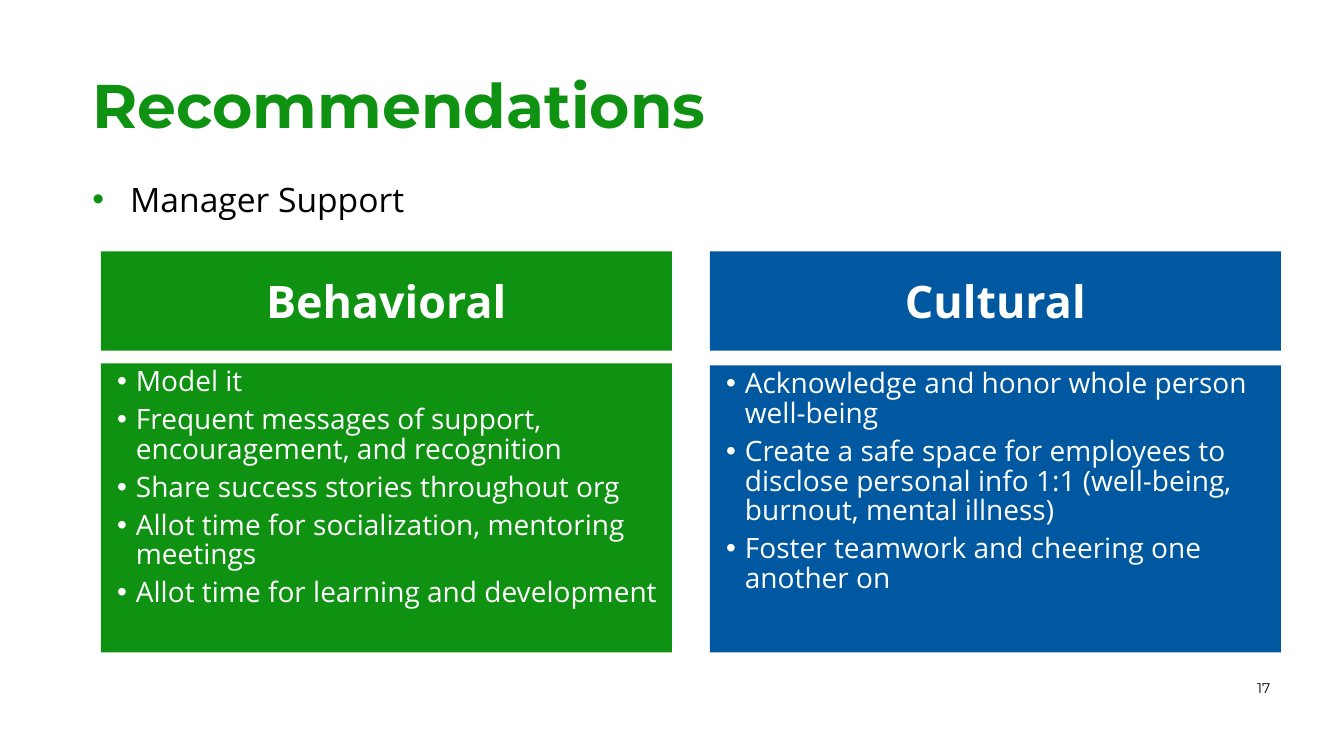
from lxml import etree
from pptx import Presentation
from pptx.dml.color import RGBColor
from pptx.enum import shapes, text
from pptx.oxml import ns
from pptx.util import Pt

GREEN, BLUE, WHITE, BLACK = "0F9112", "0058A0", "FFFFFF", "000000"
COLUMN_W, HEADER_TOP, HEADER_H = 408, 179.5, 71

# heading, colour, left, list top, list height, items
COLUMNS = [
    ("Cultural", BLUE, 507, 261, 205, [
        "Acknowledge and honor whole person well-being",
        "Create a safe space for employees to disclose personal info 1:1 "
        "(well-being, burnout, mental illness)",
        "Foster teamwork and cheering one another on"]),
    ("Behavioral", GREEN, 72, 259.5, 206.5, [
        "Model it",
        "Frequent messages of support, encouragement, and recognition",
        "Share success stories throughout org",
        "Allot time for socialization, mentoring meetings",
        "Allot time for learning and development"]),
]


def rgb(value):
    return RGBColor.from_string(value)


def style(p, size, color, font="Open Sans", bold=False):
    for r in p.runs:
        r.font.name, r.font.size, r.font.bold = font, Pt(size), bold
        r.font.color.rgb = rgb(color)


def add_bullet(p, indent, hanging, color):
    pPr = p._p.get_or_add_pPr()
    pPr.set("marL", str(Pt(indent)))
    pPr.set("indent", str(-Pt(hanging)))
    clr = etree.SubElement(pPr, ns.qn("a:buClr"))
    etree.SubElement(clr, ns.qn("a:srgbClr"), val=color)
    etree.SubElement(pPr, ns.qn("a:buFont"), typeface="Arial")
    etree.SubElement(pPr, ns.qn("a:buChar"), char="•")
    p.space_after = Pt(6)


def set_frame(tf, left=0, top=0, right=0, bottom=0, anchor=text.MSO_ANCHOR.TOP):
    tf.word_wrap = True
    tf.auto_size = text.MSO_AUTO_SIZE.NONE
    tf.margin_left, tf.margin_top = Pt(left), Pt(top)
    tf.margin_right, tf.margin_bottom = Pt(right), Pt(bottom)
    tf.vertical_anchor = anchor


def add_title(slide, title):
    sp = slide.shapes.title
    sp.left, sp.top, sp.width, sp.height = Pt(66), Pt(54), Pt(828), Pt(54)
    set_frame(sp.text_frame)
    sp.text_frame.text = title
    p = sp.text_frame.paragraphs[0]
    p.alignment = text.PP_ALIGN.LEFT
    p.line_spacing = 0.9
    style(p, 44, GREEN, "Montserrat", True)


def add_text(slide, content, left, top, width, height):
    tf = slide.shapes.add_textbox(Pt(left), Pt(top), Pt(width), Pt(height)).text_frame
    set_frame(tf)
    tf.text = content
    return tf


def add_panel(slide, left, top, height, color, anchor):
    sp = slide.shapes.add_shape(shapes.MSO_SHAPE.RECTANGLE, Pt(left), Pt(top),
                                Pt(COLUMN_W), Pt(height))
    sp.shadow.inherit = False
    sp.fill.solid()
    sp.fill.fore_color.rgb = rgb(color)
    sp.line.fill.background()
    set_frame(sp.text_frame, 7.2, 3.6, 7.2, 3.6, anchor)
    return sp.text_frame


def add_column(slide, heading, color, left, top, height, items):
    # List panel
    tf = add_panel(slide, left, top, height, color, text.MSO_ANCHOR.TOP)
    tf.text = "\n".join(items)
    for p in tf.paragraphs:
        add_bullet(p, 18, 13.5, WHITE)
        p.alignment = text.PP_ALIGN.LEFT
        p.line_spacing = 0.88
        style(p, 20, WHITE)

    # Heading panel
    tf = add_panel(slide, left, HEADER_TOP, HEADER_H, color, text.MSO_ANCHOR.MIDDLE)
    tf.text = heading
    tf.paragraphs[0].alignment = text.PP_ALIGN.CENTER
    style(tf.paragraphs[0], 32, WHITE, bold=True)


def main():
    prs = Presentation()
    prs.slide_width, prs.slide_height = Pt(960), Pt(540)
    slide = prs.slides.add_slide(prs.slide_layouts[5])

    # Title and topic
    add_title(slide, "Recommendations")
    p = add_text(slide, "Manager Support", 66, 128, 828, 39).paragraphs[0]
    add_bullet(p, 27, 27, GREEN)
    style(p, 24, BLACK)

    # Slide number
    tf = add_text(slide, "17", 874, 476.5, 40.5, 30)
    set_frame(tf, 0, 3.6, 7.2, 3.6, text.MSO_ANCHOR.MIDDLE)
    tf.paragraphs[0].alignment = text.PP_ALIGN.RIGHT
    style(tf.paragraphs[0], 10, BLACK, "Montserrat")

    # Columns
    for column in COLUMNS:
        add_column(slide, *column)

    prs.save("out.pptx")


if __name__ == "__main__":
    main()
